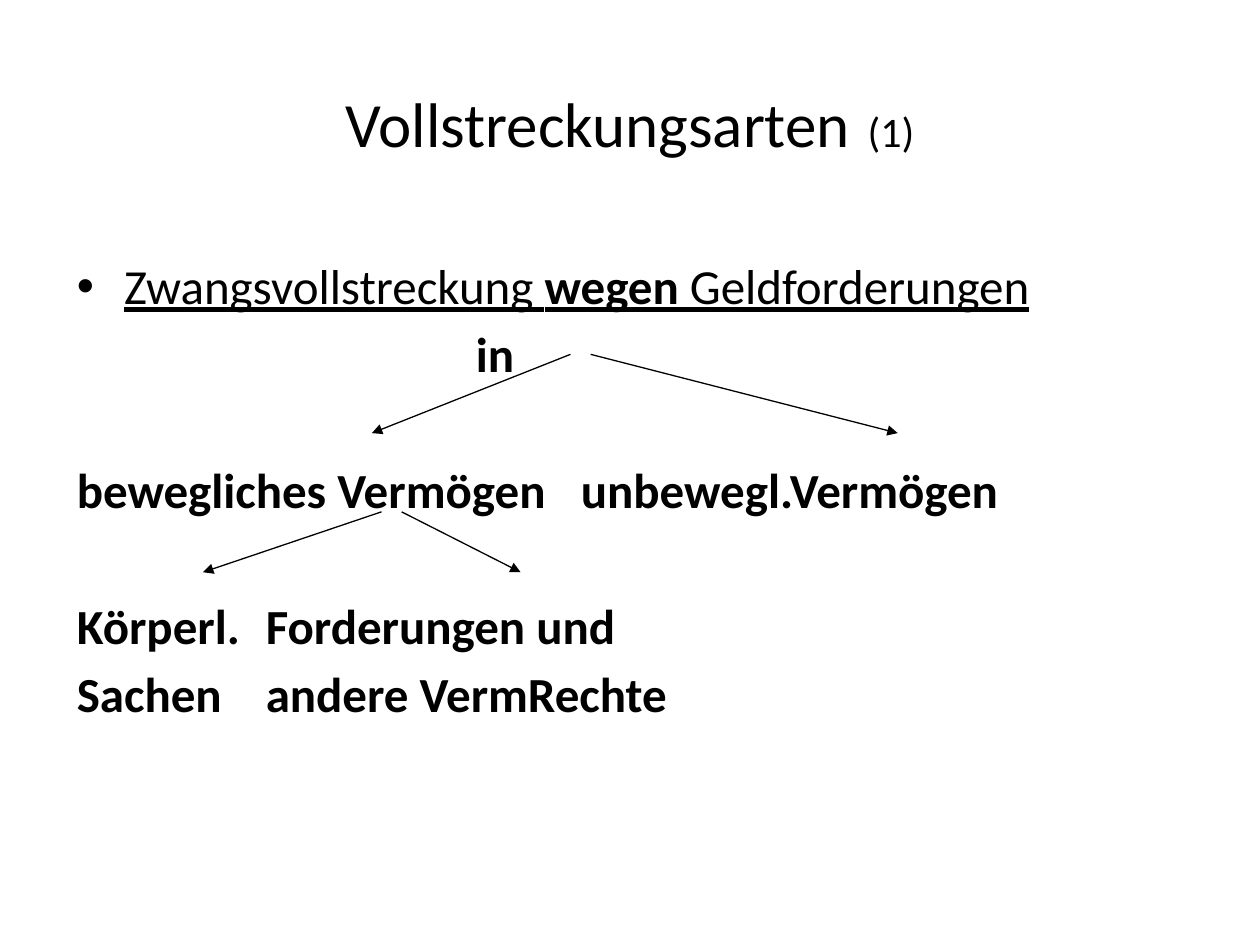
from lxml.etree import SubElement
from pptx import Presentation
from pptx.dml.color import RGBColor
from pptx.enum.shapes import MSO_CONNECTOR
from pptx.enum.text import MSO_ANCHOR, MSO_AUTO_SIZE, PP_ALIGN
from pptx.oxml.ns import qn
from pptx.util import Pt

COLORS = {"ink": "000000", "paper": "FFFFFF"}
INK = RGBColor.from_string(COLORS["ink"])

prs = Presentation()
prs.slide_width, prs.slide_height = Pt(720), Pt(540)
slide = prs.slides.add_slide(prs.slide_layouts[1])
slide.background.fill.solid()
slide.background.fill.fore_color.rgb = RGBColor.from_string(COLORS["paper"])


def style(font, size):
    font.name, font.size, font.color.rgb = "Calibri", Pt(size), INK


# Title
title = slide.shapes.title
title.left, title.top, title.width, title.height = Pt(36), Pt(21.6), Pt(648), Pt(90)
title.text_frame.vertical_anchor = MSO_ANCHOR.MIDDLE
heading = title.text_frame.paragraphs[0]
heading.alignment = PP_ALIGN.CENTER
for text, size in [("Vollstreckungsarten", 36), (" ", 44), ("(1)", 24)]:
    run = heading.add_run()
    run.text = text
    style(run.font, size)

# Body: runs as (text, bold), left margin, tab stop, space before
body = slide.placeholders[1]
body.left, body.top, body.width, body.height = Pt(36.7), Pt(142.6), Pt(648), Pt(356.4)
frame = body.text_frame
frame.auto_size = MSO_AUTO_SIZE.NONE
GAP, ARROW_GAP = 5, 44.2
topic = [("Zwangsvollstreckung ", False), ("wegen", True), (" Geldforderungen", False)]
lines = [
    (topic, 27, None, 0),
    ([("in", True)], 228, None, GAP),
    ([("bewegliches Vermögen\tunbewegl.Vermögen", True)], 0, 294, ARROW_GAP),
    ([("Körperl.\tForderungen und", True)], 0, 138, ARROW_GAP),
    ([("Sachen\tandere VermRechte", True)], 0, 134.5, GAP),
]
for i, (runs, margin, tab, before) in enumerate(lines):
    line = frame.paragraphs[0] if i == 0 else frame.add_paragraph()
    is_topic = runs is topic
    props = line._p.get_or_add_pPr()
    props.set("marL", str(Pt(margin)))
    props.set("indent", str(Pt(-margin if is_topic else 0)))
    if is_topic:
        SubElement(props, qn("a:buFont"), typeface="Arial")
        SubElement(props, qn("a:buChar"), char="•")
    else:
        SubElement(props, qn("a:buNone"))
    if tab:
        stops = SubElement(props, qn("a:tabLst"))
        SubElement(stops, qn("a:tab"), pos=str(Pt(tab)), algn="l")
    line.space_before = Pt(before)
    style(line.font, 28)
    line.font.underline = is_topic
    if not is_topic:
        line.font.bold = True
    for text, bold in runs:
        run = line.add_run()
        run.text = text
        if is_topic:
            run.font.bold = bold

# Arrows from each term to its two branches
arrows = [
    (326, 202.5, 212.5, 247.5),
    (337.5, 202.5, 513, 247.5),
    (218, 292.5, 116, 327),
    (229.5, 292.5, 297.5, 327),
]
for ends in arrows:
    arrow = slide.shapes.add_connector(MSO_CONNECTOR.STRAIGHT, *map(Pt, ends))
    arrow.line.color.rgb = INK
    arrow.line.width = Pt(0.75)
    SubElement(arrow.line._get_or_add_ln(), qn("a:tailEnd"), type="triangle")
    SubElement(arrow._element.spPr, qn("a:effectLst"))

prs.save("out.pptx")
